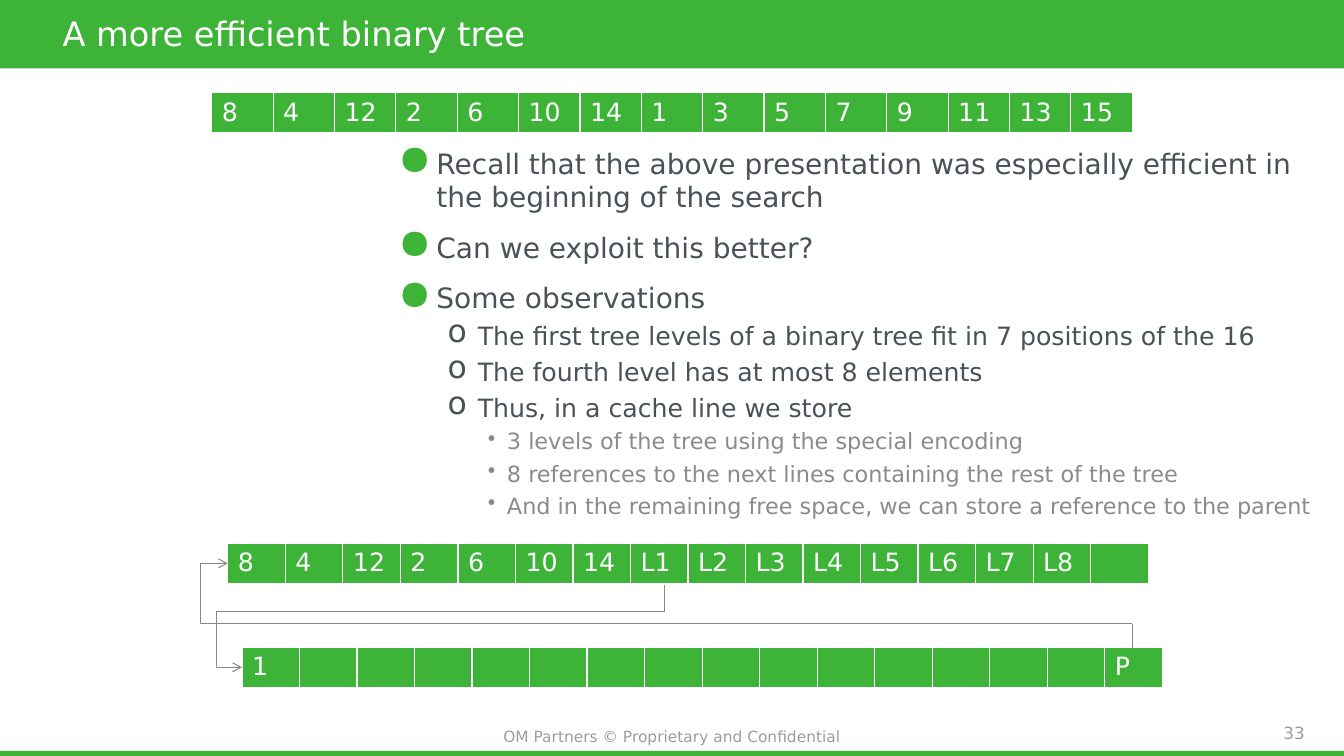
from lxml.etree import SubElement
from pptx import Presentation
from pptx.dml.color import RGBColor
from pptx.enum.shapes import MSO_CONNECTOR as CONN, MSO_SHAPE as SHAPE
from pptx.enum.text import MSO_ANCHOR as ANCHOR, PP_ALIGN as ALIGN
from pptx.oxml.ns import qn
from pptx.util import Inches, Pt

GREEN, WHITE, DARK, GREY, PALE = "3DB438", "FFFFFF", "495257", "8B8B8B", "9C9C9C"
W, H = 13.33, 7.5


def add(parent, tag, **attrs):
    """Append an a: element with the given attributes."""
    return SubElement(parent, qn("a:" + tag), {k: str(v) for k, v in attrs.items()})


def write(p, text, size=18, color=WHITE, align=ALIGN.LEFT, before=0, line=None):
    p.alignment = align
    p.space_before = Pt(before)
    if line:
        p.line_spacing = Pt(line)
    r = p.add_run()
    r.text = text
    r.font.name, r.font.size = "DejaVu Sans", Pt(size)
    r.font.color.rgb = RGBColor.from_string(color)


prs = Presentation()
prs.slide_width, prs.slide_height = Inches(W), Inches(H)
s = prs.slides.add_slide(prs.slide_layouts[5])

# Header and footer bands
for top, height in [(0, 0.68), (7.45, 0.07)]:
    sp = s.shapes.add_shape(SHAPE.RECTANGLE, 0, Inches(top), Inches(W), Inches(height))
    sp.shadow.inherit = False
    sp.fill.solid()
    sp.fill.fore_color.rgb = RGBColor.from_string(GREEN)
    sp.line.fill.background()

# Title, brought in front of the header band
title = s.shapes.title
s.shapes._spTree.append(title._element)
title.left, title.top, title.width, title.height = map(Inches, (0.52, 0.08, 12.23, 0.75))
title.text_frame.vertical_anchor = ANCHOR.TOP
write(title.text_frame.paragraphs[0], "A more efficient binary tree", size=24)

# Footer and page number
for text, size, left, top, width in [
    ("OM Partners © Proprietary and Confidential", 11, 0, 7.01, W),
    ("33", 12, 12.47, 6.98, 0.73),
]:
    tf = s.shapes.add_textbox(*map(Inches, (left, top, width, 0.47))).text_frame
    tf.word_wrap = True
    tf.vertical_anchor = ANCHOR.MIDDLE
    if text == "33":
        tf.margin_left = tf.margin_right = tf.margin_top = tf.margin_bottom = 0
    write(tf.paragraphs[0], text, size=size, color=PALE, align=ALIGN.CENTER, line=22)

# Bulleted text: size, colour, space before, indent, hanging, bullet, bullet colour, bullet %
LEVELS = [
    (20, DARK, 12, 0.38, 0.38, "●", GREEN, 150),
    (18, DARK, 4.2, 0.79, 0.3, "o", DARK, 125),
    (16, GREY, 3.7, 1.08, 0.19, "•", GREY, 100),
]
POINTS = [
    (0, "Recall that the above presentation was especially efficient in the beginning of the search"),
    (0, "Can we exploit this better?"),
    (0, "Some observations"),
    (1, "The first tree levels of a binary tree fit in 7 positions of the 16"),
    (1, "The fourth level has at most 8 elements"),
    (1, "Thus, in a cache line we store"),
    (2, "3 levels of the tree using the special encoding"),
    (2, "8 references to the next lines containing the rest of the tree"),
    (2, "And in the remaining free space, we can store a reference to the parent"),
]
tf = s.shapes.add_textbox(*map(Inches, (3.85, 1.4, 9.49, 3.9))).text_frame
tf.word_wrap = True
for i, (level, text) in enumerate(POINTS):
    size, color, before, indent, hang, bullet, bullet_color, percent = LEVELS[level]
    p = tf.add_paragraph() if i else tf.paragraphs[0]
    p.level = level
    pPr = p._p.get_or_add_pPr()
    pPr.set("marL", str(Inches(indent)))
    pPr.set("indent", str(-Inches(hang)))
    add(add(pPr, "buClr"), "srgbClr", val=bullet_color)
    add(pPr, "buSzPct", val=percent * 1000)
    add(pPr, "buChar", char=bullet)
    write(p, text, size=size, color=color, before=before if i else 0)

# Arrays
ROW_W, ROW_H = 9.13, 0.41
ROOT = [8, 4, 12, 2, 6, 10, 14]
ARRAYS = [
    (2.1, 0.92, ROOT + list(range(1, 16, 2))),
    (2.26, 5.39, ROOT + [f"L{n}" for n in range(1, 9)] + [""]),
    (2.4, 6.42, [1] + [""] * 14 + ["P"]),
]
for left, top, values in ARRAYS:
    table = s.shapes.add_table(1, len(values), *map(Inches, (left, top, ROW_W, ROW_H))).table
    table.first_row = table.horz_banding = False
    for col, value in enumerate(values):
        table.columns[col].width = Inches(ROW_W / len(values))
        cell = table.cell(0, col)
        for side, width in [("L", 1), ("R", 1), ("T", 1), ("B", 3)]:
            ln = add(cell._tc.get_or_add_tcPr(), "ln" + side, w=Pt(width))
            add(add(ln, "solidFill"), "srgbClr", val=WHITE)
        cell.fill.solid()
        cell.fill.fore_color.rgb = RGBColor.from_string(GREEN)
        if value != "":
            write(cell.text_frame.paragraphs[0], str(value))

# References between arrays: from, to, and for an elbow the share of its width to the bend
LINKS = [
    (6.59, 6.07, 2.4, 6.62, 1.06),
    (6.59, 6.07, 6.59, 5.8, None),
    (11.23, 6.19, 2.26, 5.59, 1.03),
    (11.23, 6.19, 11.23, 6.43, None),
]
for *ends, bend in LINKS:
    c = s.shapes.add_connector(CONN.ELBOW if bend else CONN.STRAIGHT, *map(Inches, ends))
    c.line.color.rgb = RGBColor.from_string("888888")
    c.line.width = Pt(0.75)
    spPr = c._element.spPr
    if bend:
        guides = spPr.find(qn("a:prstGeom")).find(qn("a:avLst"))
        add(guides, "gd", name="adj1", fmla=f"val {round(bend * 100000)}")
        add(spPr.find(qn("a:ln")), "tailEnd", type="arrow")
    add(spPr, "effectLst")

prs.save("out.pptx")
